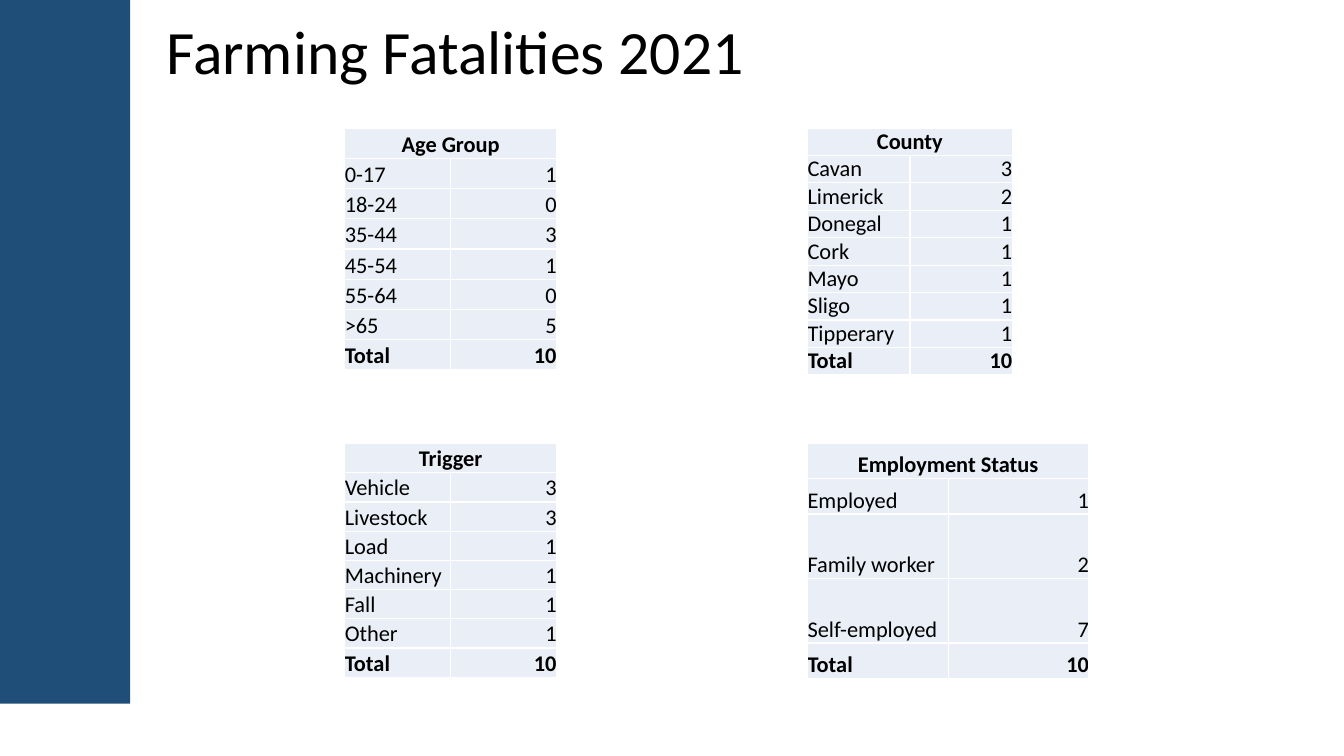
from lxml.etree import SubElement
from pptx import Presentation
from pptx.dml.color import RGBColor
from pptx.enum.shapes import MSO_SHAPE
from pptx.enum.text import MSO_ANCHOR, MSO_AUTO_SIZE, PP_ALIGN
from pptx.oxml.ns import qn
from pptx.util import Inches, Pt

COLORS = {"band": "1F4E79", "cell": "EAEFF7", "border": "FFFFFF", "text": "000000"}
FONT = "Calibri"

LEFT_COLUMN, RIGHT_COLUMN = 3.42, 8.01
TOP_ROW, BOTTOM_ROW = 1.27, 4.4

# Each table: heading, left, top, width, row heights, counts by category
TABLES = [
    ("Age Group", LEFT_COLUMN, TOP_ROW, 2.1, [0.3] * 8,
     {"0-17": 1, "18-24": 0, "35-44": 3, "45-54": 1, "55-64": 0, ">65": 5}),
    ("County", RIGHT_COLUMN, TOP_ROW, 2.03, [0.27] * 9,
     {"Cavan": 3, "Limerick": 2, "Donegal": 1, "Cork": 1, "Mayo": 1,
      "Sligo": 1, "Tipperary": 1}),
    ("Trigger", LEFT_COLUMN, BOTTOM_ROW, 2.1, [0.29] * 8,
     {"Vehicle": 3, "Livestock": 3, "Load": 1, "Machinery": 1, "Fall": 1, "Other": 1}),
    ("Employment Status", RIGHT_COLUMN, BOTTOM_ROW, 2.79, [0.35, 0.35, 0.64, 0.64, 0.35],
     {"Employed": 1, "Family worker": 2, "Self-employed": 7}),
]


def set_attributes(target, values):
    for name, value in values.items():
        setattr(target, name, value)


def format_font(font, size, bold=False):
    set_attributes(font, {"name": FONT, "size": Pt(size), "bold": bold})
    font.color.rgb = RGBColor.from_string(COLORS["text"])


def add_side_band(slide):
    band = slide.shapes.add_shape(
        MSO_SHAPE.RECTANGLE, Inches(-0.02), Inches(0), Inches(1.31), Inches(6.98))
    band.shadow.inherit = False
    band.fill.solid()
    band.fill.fore_color.rgb = RGBColor.from_string(COLORS["band"])
    band.line.fill.background()


def format_title(title, text):
    set_attributes(title, {"left": Inches(1.55), "top": Inches(0),
                           "width": Inches(11.5), "height": Inches(1.09)})
    frame = title.text_frame
    frame.text = text
    set_attributes(frame, {"vertical_anchor": MSO_ANCHOR.MIDDLE, "word_wrap": True,
                           "auto_size": MSO_AUTO_SIZE.NONE})
    paragraph = frame.paragraphs[0]
    set_attributes(paragraph, {"alignment": PP_ALIGN.LEFT, "line_spacing": 0.9})
    format_font(paragraph.runs[0].font, 44)


def add_borders(cell):
    properties = cell._tc.get_or_add_tcPr()
    for side in ("lnL", "lnR", "lnT", "lnB"):
        line = SubElement(properties, qn(f"a:{side}"), w=str(Pt(1)))
        fill = SubElement(line, qn("a:solidFill"))
        SubElement(fill, qn("a:srgbClr"), val=COLORS["border"])


def format_cell(cell, text, alignment, bold):
    # Borders come before the fill in the cell properties
    add_borders(cell)
    cell.fill.solid()
    cell.fill.fore_color.rgb = RGBColor.from_string(COLORS["cell"])
    set_attributes(cell, {"margin_left": 0, "margin_right": 0, "margin_top": 0,
                          "margin_bottom": 0, "vertical_anchor": MSO_ANCHOR.BOTTOM})
    paragraph = cell.text_frame.paragraphs[0]
    paragraph.alignment = alignment
    format_font(paragraph.font, 16, bold)
    if text:
        run = paragraph.add_run()
        run.text = text
        format_font(run.font, 16, bold)


def add_count_table(slide, heading, left, top, width, heights, counts):
    rows = [(heading, ""), *counts.items(), ("Total", sum(counts.values()))]
    table = slide.shapes.add_table(
        len(rows), 2, Inches(left), Inches(top), Inches(width), Inches(sum(heights))).table
    set_attributes(table, {"first_row": False, "horz_banding": False})
    for row, height in zip(table.rows, heights):
        row.height = Inches(height)

    for index, (label, count) in enumerate(rows):
        bold = index in (0, len(rows) - 1)
        label_alignment = PP_ALIGN.LEFT if index else PP_ALIGN.CENTER
        format_cell(table.cell(index, 0), label, label_alignment, bold)
        format_cell(table.cell(index, 1), str(count), PP_ALIGN.RIGHT, bold)
    table.cell(0, 0).merge(table.cell(0, 1))


def main():
    presentation = Presentation()
    set_attributes(presentation, {"slide_width": Inches(13.33), "slide_height": Inches(7.5)})
    slide = presentation.slides.add_slide(presentation.slide_layouts[5])

    # Band and title
    add_side_band(slide)
    format_title(slide.shapes.title, "Farming Fatalities 2021")

    # Four tables in a two by two grid
    for table in TABLES:
        add_count_table(slide, *table)

    presentation.save("out.pptx")


if __name__ == "__main__":
    main()
